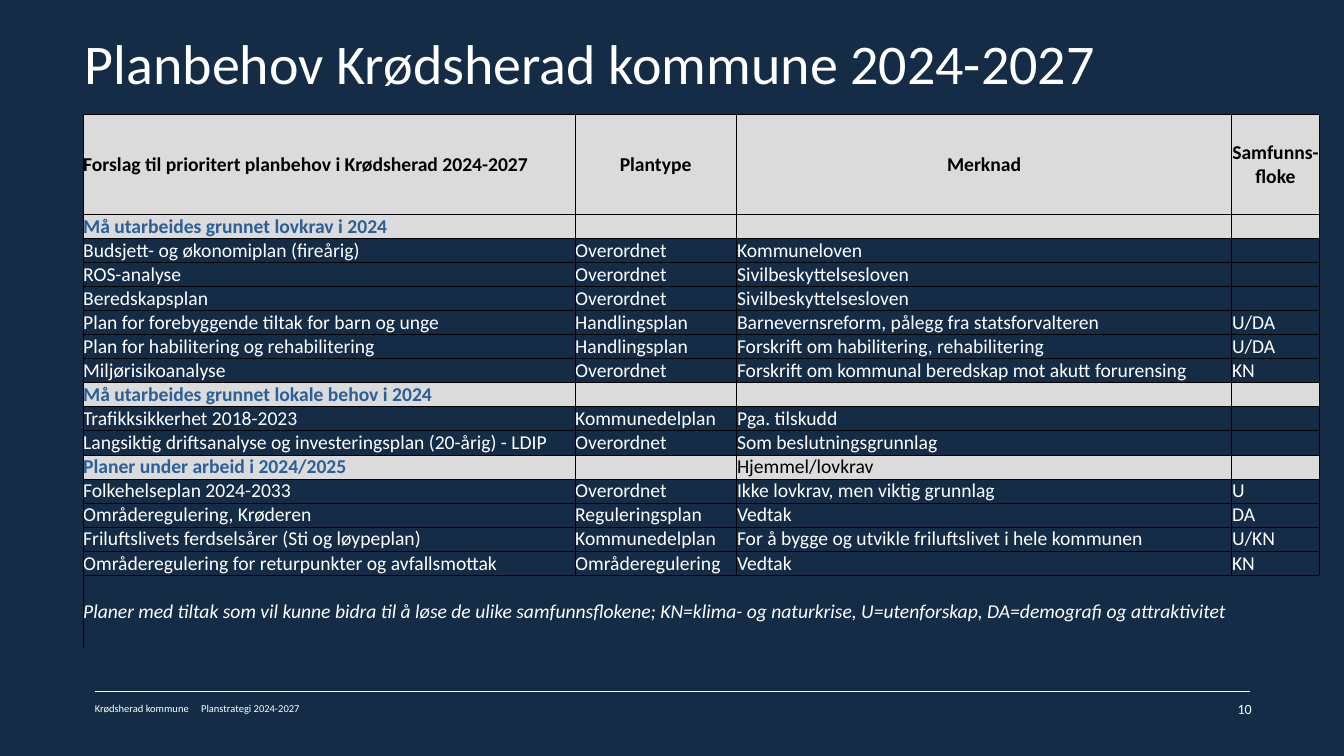
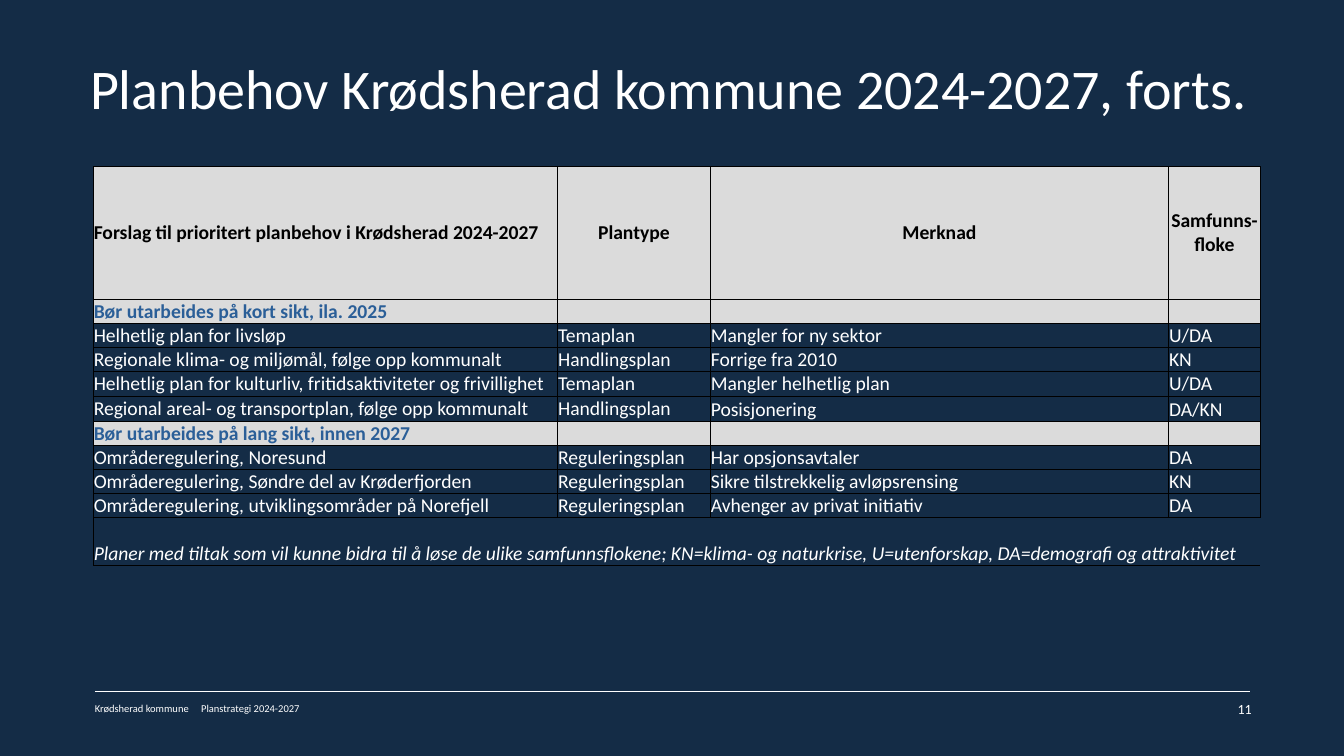
"""Builds two slides listing the planning needs of Krødsherad kommune."""
from lxml import etree
from pptx import Presentation
from pptx.dml.color import RGBColor
from pptx.enum.shapes import MSO_CONNECTOR
from pptx.enum.text import MSO_ANCHOR, MSO_AUTO_SIZE, PP_ALIGN
from pptx.oxml.ns import qn
from pptx.util import Inches, Pt

LEFT, CENTER, RIGHT = PP_ALIGN.LEFT, PP_ALIGN.CENTER, PP_ALIGN.RIGHT
TOP, MIDDLE, BOTTOM = MSO_ANCHOR.TOP, MSO_ANCHOR.MIDDLE, MSO_ANCHOR.BOTTOM
NO_FIT, GROW = MSO_AUTO_SIZE.NONE, MSO_AUTO_SIZE.SHAPE_TO_FIT_TEXT
STRAIGHT = MSO_CONNECTOR.STRAIGHT

COLORS = {
    "background": "142C46",
    "text": "FFFFFF",
    "band": "DBDBDB",
    "section": "2B5F98",
    "dark": "000000",
}
FONT = "Calibri"
PLAIN_TABLE = "{2D5ABB26-0587-4C30-8999-92F81FD0307C}"
TITLE_ONLY = 5

HEADINGS = (
    "Forslag til prioritert planbehov i Krødsherad 2024-2027",
    "Plantype",
    "Merknad",
    "Samfunns- floke",
)
NOTE = (
    "Planer med tiltak som vil kunne bidra til å løse de ulike samfunnsflokene; "
    "KN=klima- og naturkrise, U=utenforskap, DA=demografi og attraktivitet"
)
PLANS_2024 = [
    ("Må utarbeides grunnet lovkrav i 2024",),
    ("Budsjett- og økonomiplan (fireårig)", "Overordnet", "Kommuneloven", ""),
    ("ROS-analyse", "Overordnet", "Sivilbeskyttelsesloven", ""),
    ("Beredskapsplan", "Overordnet", "Sivilbeskyttelsesloven", ""),
    ("Plan for forebyggende tiltak for barn og unge", "Handlingsplan",
     "Barnevernsreform, pålegg fra statsforvalteren", "U/DA"),
    ("Plan for habilitering og rehabilitering", "Handlingsplan",
     "Forskrift om habilitering, rehabilitering", "U/DA"),
    ("Miljørisikoanalyse", "Overordnet",
     "Forskrift om kommunal beredskap mot akutt forurensing", "KN"),
    ("Må utarbeides grunnet lokale behov i 2024",),
    ("Trafikksikkerhet 2018-2023", "Kommunedelplan", "Pga. tilskudd", ""),
    ("Langsiktig driftsanalyse og investeringsplan (20-årig) - LDIP", "Overordnet",
     "Som beslutningsgrunnlag", ""),
    ("Planer under arbeid i 2024/2025", "", "Hjemmel/lovkrav"),
    ("Folkehelseplan 2024-2033", "Overordnet", "Ikke lovkrav, men viktig grunnlag", "U"),
    ("Områderegulering, Krøderen", "Reguleringsplan", "Vedtak", "DA"),
    ("Friluftslivets ferdselsårer (Sti og løypeplan)", "Kommunedelplan",
     "For å bygge og utvikle friluftslivet i hele kommunen", "U/KN"),
    ("Områderegulering for returpunkter og avfallsmottak", "Områderegulering",
     "Vedtak", "KN"),
]
PLANS_LATER = [
    ("Bør utarbeides på kort sikt, ila. 2025",),
    ("Helhetlig plan for livsløp", "Temaplan", "Mangler for ny sektor", "U/DA"),
    ("Regionale klima- og miljømål, følge opp kommunalt", "Handlingsplan",
     "Forrige fra 2010", "KN"),
    ("Helhetlig plan for kulturliv, fritidsaktiviteter og frivillighet", "Temaplan",
     "Mangler helhetlig plan", "U/DA"),
    ("Regional areal- og transportplan, følge opp kommunalt", "Handlingsplan",
     "Posisjonering", "DA/KN"),
    ("Bør utarbeides på lang sikt, innen 2027",),
    ("Områderegulering, Noresund", "Reguleringsplan", "Har opsjonsavtaler", "DA"),
    ("Områderegulering, Søndre del av Krøderfjorden", "Reguleringsplan",
     "Sikre tilstrekkelig avløpsrensing", "KN"),
    ("Områderegulering, utviklingsområder på Norefjell", "Reguleringsplan",
     "Avhenger av privat initiativ", "DA"),
]


def rgb(name):
    return RGBColor.from_string(COLORS[name])


class PlanDeck:
    """Holds the shared style and the slide being filled."""

    def __init__(self):
        self.prs = Presentation()
        self.prs.slide_width, self.prs.slide_height = Inches(26.66), Inches(15)
        fill = self.prs.slide_master.background.fill
        fill.solid()
        fill.fore_color.rgb = rgb("background")
        self.slide = None

    def new_slide(self, title, title_box, number):
        self.slide = self.prs.slides.add_slide(self.prs.slide_layouts[TITLE_ONLY])
        self.title(title, title_box)
        self.rule((1.88, 13.71), (24.79, 13.71))
        self.label("Krødsherad kommune", (1.88, 13.92, 6.56, 0.25), 15, anchor=TOP)
        self.label("Planstrategi 2024-2027", (3.99, 13.92, 9, 0.25), 15)
        self.label(str(number), (18.83, 13.89, 6, 0.34), 20, RIGHT)

    def set_text(self, frame, text, size, align=LEFT, color="text", bold=False, italic=False):
        frame.text = text
        paragraph = frame.paragraphs[0]
        paragraph.alignment = align
        paragraph.font.size = Pt(size)
        for run in paragraph.runs:
            font = run.font
            font.name, font.size = FONT, Pt(size)
            font.bold, font.italic = bold, italic
            font.color.rgb = rgb(color)

    def set_frame(self, frame, anchor, fit):
        frame.margin_left = frame.margin_right = frame.margin_top = frame.margin_bottom = 0
        frame.word_wrap = True
        frame.auto_size = fit
        frame.vertical_anchor = anchor

    def title(self, text, box):
        heading = self.slide.shapes.title
        heading.left, heading.top, heading.width, heading.height = map(Inches, box)
        self.set_frame(heading.text_frame, TOP, NO_FIT)
        self.set_text(heading.text_frame, text, 80, CENTER)

    def label(self, text, box, size, align=LEFT, anchor=MIDDLE):
        frame = self.slide.shapes.add_textbox(*map(Inches, box)).text_frame
        self.set_frame(frame, anchor, GROW)
        self.set_text(frame, text, size, align)

    def rule(self, start, end):
        line = self.slide.shapes.add_connector(STRAIGHT, *map(Inches, start + end))
        line.line.color.rgb = rgb("text")
        line.line.width = Pt(0.3)
        etree.SubElement(line.element.spPr, qn("a:effectLst"))

    def borders(self, cell, edges):
        properties = cell._tc.get_or_add_tcPr()
        for edge in "LRTB":
            line = etree.SubElement(properties, qn(f"a:ln{edge}"), w=str(Pt(0.5)))
            if edge in edges:
                solid = etree.SubElement(line, qn("a:solidFill"))
                etree.SubElement(solid, qn("a:srgbClr"), val=COLORS["dark"])
            else:
                etree.SubElement(line, qn("a:noFill"))

    def cell(self, cell, text, anchor, edges="LRTB", band=False, **style):
        cell.margin_left = cell.margin_right = cell.margin_top = Inches(0.01)
        cell.margin_bottom = 0
        cell.vertical_anchor = anchor
        self.borders(cell, edges)
        if band:
            cell.fill.solid()
            cell.fill.fore_color.rgb = rgb("band")
        else:
            cell.fill.background()
        self.set_text(cell.text_frame, text, 28, **style)

    def plan_table(self, plans, corner, widths, heights, note_anchor, note_edges):
        box = corner + (sum(widths), sum(heights))
        holder = self.slide.shapes.add_table(
            len(heights), len(widths), *map(Inches, box))
        table = holder.table
        table.first_row = table.horz_banding = False
        next(holder.element.iter(qn("a:tableStyleId"))).text = PLAIN_TABLE
        for column, width in zip(table.columns, widths):
            column.width = Inches(width)
        for row, height in zip(table.rows, heights):
            row.height = Inches(height)

        for c, heading in enumerate(HEADINGS):
            self.cell(table.cell(0, c), heading, MIDDLE, band=True,
                      align=CENTER if c else LEFT, color="dark", bold=True)
        for r, plan in enumerate(plans, 1):
            section = len(plan) < len(widths)
            for c in range(len(widths)):
                text = plan[c] if c < len(plan) else ""
                color = ("dark" if c else "section") if section else "text"
                self.cell(table.cell(r, c), text, MIDDLE if c < 2 else BOTTOM,
                          band=section, color=color, bold=section and c == 0)

        last = len(heights) - 1
        table.cell(last, 0).merge(table.cell(last, len(widths) - 1))
        for c in range(len(widths)):
            self.cell(table.cell(last, c), "" if c else NOTE, note_anchor,
                      edges=note_edges if c else "L" + note_edges, italic=True)


def main():
    deck = PlanDeck()
    deck.new_slide("Planbehov Krødsherad kommune 2024-2027", (0.31, 0.57, 22.8, 3.41), 10)
    deck.plan_table(PLANS_2024, (1.64, 2.27), (9.76, 3.21, 9.82, 1.74),
                    [1.98] + [0.47] * len(PLANS_2024) + [1.45], MIDDLE, "T")
    deck.new_slide("Planbehov Krødsherad kommune 2024-2027, forts.",
                   (1.24, 1.07, 24.06, 1.77), 11)
    deck.plan_table(PLANS_LATER, (1.85, 3.3), (9.21, 3.03, 9.09, 1.82),
                    [2.63] + [0.46] * 3 + [0.5] * 2 + [0.47] + [0.46] * 3 + [0.95],
                    BOTTOM, "TB")
    deck.prs.save("out.pptx")


if __name__ == "__main__":
    main()
